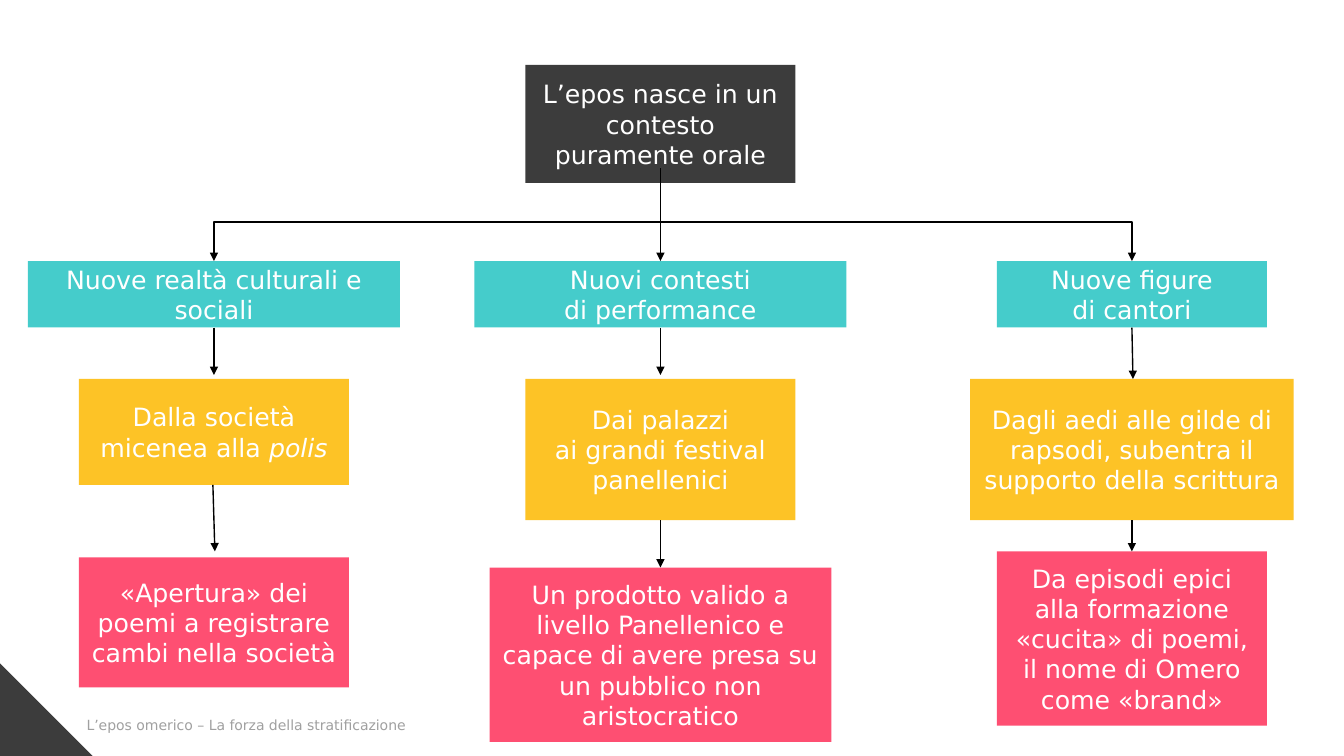
from dataclasses import dataclass

from lxml.etree import SubElement
from pptx import Presentation
from pptx.dml.color import RGBColor
from pptx.enum.shapes import MSO_CONNECTOR, MSO_SHAPE
from pptx.enum.text import MSO_ANCHOR, PP_ALIGN
from pptx.oxml.ns import qn
from pptx.shapes.connector import Connector
from pptx.slide import Slide
from pptx.util import Inches, Length, Pt


@dataclass(frozen=True)
class Theme:
    font: str = "DejaVu Sans"
    body: int = 18
    footer: int = 10
    line: int = 1
    dark: str = "3C3C3C"
    teal: str = "45CCCB"
    yellow: str = "FDC326"
    pink: str = "FE4F72"
    white: str = "FFFFFF"
    grey: str = "A0A0A0"
    black: str = "000000"


@dataclass(frozen=True)
class Run:
    text: str
    italic: bool = False


@dataclass(frozen=True)
class Box:
    """A box centred on a column; each paragraph is a tuple of runs."""
    center: float
    top: float
    width: float
    height: float
    fill: str
    paragraphs: tuple[tuple[Run, ...], ...]


@dataclass(frozen=True)
class Arrow:
    x: float
    top: float
    bottom: float
    drift: float = 0


T = Theme()
WIDTH, HEIGHT = Inches(13.33), Inches(7.5)

# Lengths are percent of the slide's width (across) and height (down).
LEFT, MID, RIGHT = 15.92, 49.14, 84.22
NARROW, WIDE = 20.1, 27.68
TEAL_TOP, TEAL_H = 34.53, 8.8
TEAL_END = TEAL_TOP + TEAL_H
YELLOW_TOP, YELLOW_H = 50.13, 18.67
YELLOW_END = YELLOW_TOP + YELLOW_H
ROOT_TOP, ROOT_H = 8.6, 15.6
ROOT_END = ROOT_TOP + ROOT_H
ARROW_GAP = 49.6
PINK_H = 23.07


def plain(*lines: str) -> tuple[tuple[Run, ...], ...]:
    return tuple((Run(line),) for line in lines)


BOXES = (
    Box(MID, ROOT_TOP, NARROW, ROOT_H, T.dark,
        plain("L’epos nasce in un contesto puramente orale")),
    Box(LEFT, TEAL_TOP, WIDE, TEAL_H, T.teal,
        plain("Nuove realtà culturali e sociali")),
    Box(MID, TEAL_TOP, WIDE, TEAL_H, T.teal,
        plain("Nuovi contesti", "di performance")),
    Box(RIGHT, TEAL_TOP, NARROW, TEAL_H, T.teal,
        plain("Nuove figure", "di cantori")),
    Box(LEFT, YELLOW_TOP, NARROW, 14, T.yellow,
        ((Run("Dalla società micenea alla "), Run("polis", True)),)),
    Box(MID, YELLOW_TOP, NARROW, YELLOW_H, T.yellow,
        plain("Dai palazzi", "ai grandi festival panellenici")),
    Box(RIGHT, YELLOW_TOP, 24.08, YELLOW_H, T.yellow,
        plain("Dagli aedi alle gilde di rapsodi, subentra il supporto della scrittura")),
    Box(LEFT, 73.73, NARROW, 17.2, T.pink,
        plain("«Apertura» dei poemi a registrare cambi nella società")),
    Box(MID, 75.07, 25.43, PINK_H, T.pink,
        plain("Un prodotto valido a livello Panellenico e capace di avere presa su "
              "un pubblico non aristocratico")),
    Box(RIGHT, 72.93, NARROW, PINK_H, T.pink,
        plain("Da episodi epici alla formazione «cucita» di poemi, il nome di Omero "
              "come «brand»")),
)

ARROWS = (
    Arrow(MID, 22.27, TEAL_TOP),
    Arrow(LEFT, TEAL_END, ARROW_GAP),
    Arrow(MID, TEAL_END, ARROW_GAP),
    Arrow(RIGHT, TEAL_END, YELLOW_TOP, 0.08),
    Arrow(LEFT - 0.08, 64.13, 72.93, 0.15),
    Arrow(MID, YELLOW_END, 75.07),
    Arrow(RIGHT, YELLOW_END, 72.93),
)


def across(percent: float) -> Length:
    return Length(round(WIDTH * percent / 100))


def down(percent: float) -> Length:
    return Length(round(HEIGHT * percent / 100))


def add_run(p, run: Run, size: int, color: str) -> None:
    r = p.add_run()
    r.text = run.text
    r.font.name = T.font
    r.font.size = Pt(size)
    r.font.color.rgb = RGBColor.from_string(color)
    if run.italic:
        r.font.italic = True


def add_solid(s: Slide, kind: MSO_SHAPE, left: float, top: float,
              width: float, height: float, fill: str):
    sp = s.shapes.add_shape(kind, across(left), down(top), across(width), down(height))
    sp.shadow.inherit = False
    sp.fill.solid()
    sp.fill.fore_color.rgb = RGBColor.from_string(fill)
    sp.line.fill.background()
    return sp


def add_box(s: Slide, box: Box) -> None:
    sp = add_solid(s, MSO_SHAPE.RECTANGLE, box.center - box.width / 2, box.top,
                   box.width, box.height, box.fill)
    tf = sp.text_frame
    tf.word_wrap = True
    tf.vertical_anchor = MSO_ANCHOR.MIDDLE
    for i, runs in enumerate(box.paragraphs):
        p = tf.add_paragraph() if i else tf.paragraphs[0]
        p.alignment = PP_ALIGN.CENTER
        for run in runs:
            add_run(p, run, T.body, T.white)


def style_arrow(c: Connector) -> None:
    c.line.color.rgb = RGBColor.from_string(T.black)
    c.line.width = Pt(T.line)
    SubElement(c.line._get_or_add_ln(), qn("a:tailEnd"), type="triangle")
    SubElement(c._element.spPr, qn("a:effectLst"))


def add_arrow(s: Slide, a: Arrow) -> None:
    style_arrow(s.shapes.add_connector(
        MSO_CONNECTOR.STRAIGHT, across(a.x), down(a.top),
        across(a.x + a.drift), down(a.bottom)))


def add_branch(s: Slide, target: float) -> None:
    """Elbow from the root box to a side column: down, across, down.

    An elbow runs sideways first, so it is laid out on its side and turned.
    """
    side = 1 if target > MID else -1
    x, y = across((MID + target) / 2), down((ROOT_END + TEAL_TOP) / 2)
    half_drop = down((TEAL_TOP - ROOT_END) / 2)
    half_span = across(abs(target - MID) / 2)
    c = s.shapes.add_connector(MSO_CONNECTOR.ELBOW, x + side * half_drop, y - half_span,
                               x - side * half_drop, y + half_span)
    turn = 270 if side > 0 else 90
    c._element.spPr.find(qn("a:xfrm")).set("rot", str(turn * 60000))
    style_arrow(c)


def add_footer(s: Slide) -> None:
    add_solid(s, MSO_SHAPE.RIGHT_TRIANGLE, 0, 87.73, 6.9, 12.27, T.dark)
    tf = s.shapes.add_textbox(across(5.7), down(92), across(87.77), down(8)).text_frame
    tf.word_wrap = True
    tf.vertical_anchor = MSO_ANCHOR.MIDDLE
    p = tf.paragraphs[0]
    p.line_spacing = 0.9
    add_run(p, Run("L’epos omerico – La forza della stratificazione"), T.footer, T.grey)


def main() -> None:
    prs = Presentation()
    prs.slide_width, prs.slide_height = WIDTH, HEIGHT
    s = prs.slides.add_slide(prs.slide_layouts[6])
    add_footer(s)
    for box in BOXES:
        add_box(s, box)
    for target in (LEFT, RIGHT):
        add_branch(s, target)
    for arrow in ARROWS:
        add_arrow(s, arrow)
    prs.save("out.pptx")


if __name__ == "__main__":
    main()
